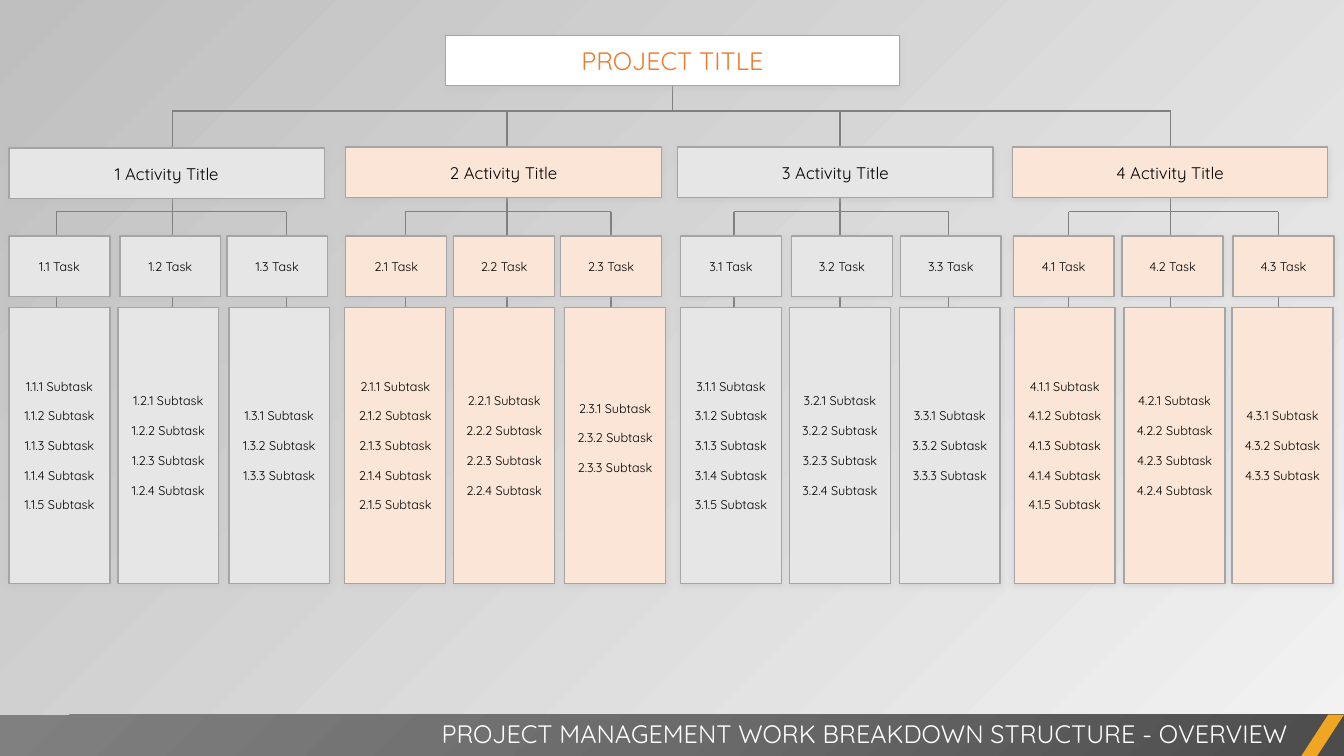
"""Builds a work breakdown structure slide with four activity branches."""
from lxml import etree
from pptx import Presentation
from pptx.dml.color import RGBColor
from pptx.enum.shapes import MSO_CONNECTOR, MSO_SHAPE
from pptx.enum.text import MSO_ANCHOR, MSO_AUTO_SIZE, PP_ALIGN
from pptx.oxml import parse_xml
from pptx.oxml.ns import nsdecls, qn
from pptx.util import Inches, Pt

RECTANGLE = MSO_SHAPE.RECTANGLE
PARALLELOGRAM = MSO_SHAPE.PARALLELOGRAM
STRAIGHT = MSO_CONNECTOR.STRAIGHT
MIDDLE = MSO_ANCHOR.MIDDLE
GROW = MSO_AUTO_SIZE.SHAPE_TO_FIT_TEXT
CENTER = PP_ALIGN.CENTER
RIGHT = PP_ALIGN.RIGHT

COLORS = {
    "white": "FFFFFF", "black": "000000", "title": "ED7D31",
    "gray": "E7E6E6", "peach": "FBE5D6", "border": "A5A5A5",
    "connector": "808080", "shadow": "BFBFBF", "accent": "F0A622",
    "back_light": "F2F2F2", "back_dark": "BFBFBF",
    "band_dark": "4C4C4C", "band_mid": "6B6B6B", "band_light": "808080",
}
TRUNK_Y, BRANCH_Y, DROP_END_Y = 1.1, 2.1, 3.33
TASK_Y, SUBTASK_Y = 2.34, 3.05
SUBTASK_COUNTS = (5, 4, 3)
BRANCHES = (
    {"fill": "gray", "activity": (0.09, 1.47), "drops": (0.56, 1.71, 2.84),
     "tasks": (0.09, 1.19, 2.25), "subtasks": (0.09, 1.17, 2.27)},
    {"fill": "peach", "activity": (3.43, 1.46), "drops": (4.02, 5.03, 6.06),
     "tasks": (3.43, 4.5, 5.56), "subtasks": (3.42, 4.5, 5.6)},
    {"fill": "gray", "activity": (6.72, 1.46), "drops": (7.28, 8.33, 9.41),
     "tasks": (6.75, 7.85, 8.93), "subtasks": (6.75, 7.83, 8.92)},
    {"fill": "peach", "activity": (10.04, 1.46), "drops": (10.6, 11.61, 12.68),
     "tasks": (10.05, 11.13, 12.23), "subtasks": (10.06, 11.15, 12.22)},
)


def rgb(name):
    return RGBColor.from_string(COLORS[name])


class Chart:
    def __init__(self, slide, font="Quicksand"):
        self.slide = slide
        self.font = font

    def background(self):
        fill = self.slide.background.fill
        fill.gradient()
        fill.gradient_angle = 135
        for stop, name in zip(fill.gradient_stops, ("back_light", "back_dark")):
            stop.color.rgb = rgb(name)

    def line(self, x1, y1, x2, y2):
        connector = self.slide.shapes.add_connector(
            STRAIGHT, Inches(x1), Inches(y1), Inches(x2), Inches(y2))
        connector.line.color.rgb = rgb("connector")
        connector.line.width = Pt(1)
        etree.SubElement(connector._element.spPr, qn("a:effectLst"))

    def set_text(self, text_frame, text, size, color, align, gap=0):
        text_frame.word_wrap = True
        text_frame.text = text
        for index, paragraph in enumerate(text_frame.paragraphs):
            paragraph.alignment = align
            if index and gap:
                paragraph.space_before = Pt(gap)
            for run in paragraph.runs:
                run.font.name = self.font
                run.font.size = Pt(size)
                run.font.color.rgb = rgb(color)

    def plain(self, kind, left, top, width, height, fill):
        shape = self.slide.shapes.add_shape(
            kind, Inches(left), Inches(top), Inches(width), Inches(height))
        shape.shadow.inherit = False
        shape.fill.solid()
        shape.fill.fore_color.rgb = rgb(fill)
        shape.line.fill.background()
        return shape

    def box(self, left, top, width, height, fill, text, size, color="black", gap=0):
        shape = self.plain(RECTANGLE, left, top, width, height, fill)
        shape.line.color.rgb = rgb("border")
        shape.line.width = Pt(1)
        shape._element.spPr.find(qn("a:effectLst")).append(parse_xml(
            f'<a:outerShdw {nsdecls("a")} blurRad="50800" dist="12700" dir="5400000">'
            f'<a:srgbClr val="{COLORS["shadow"]}"><a:alpha val="40000"/></a:srgbClr>'
            '</a:outerShdw>'))
        shape.text_frame.vertical_anchor = MIDDLE
        self.set_text(shape.text_frame, text, size, color, CENTER, gap)
        return shape

    def band(self, left, top, width, height):
        shape = self.plain(RECTANGLE, left, top, width, height, "band_mid")
        stops = "".join(
            f'<a:gs pos="{position}"><a:srgbClr val="{COLORS[name]}"/></a:gs>'
            for position, name in ((0, "band_dark"), (50000, "band_mid"), (100000, "band_light")))
        solid = shape._element.spPr.find(qn("a:solidFill"))
        solid.getparent().replace(solid, parse_xml(
            f'<a:gradFill {nsdecls("a")}><a:gsLst>{stops}</a:gsLst>'
            '<a:path path="circle"><a:fillToRect l="100000" t="100000"/></a:path>'
            '</a:gradFill>'))

    def caption(self, left, top, width, height, text):
        shape = self.slide.shapes.add_textbox(
            Inches(left), Inches(top), Inches(width), Inches(height))
        self.set_text(shape.text_frame, text, 18, "white", RIGHT)
        shape.text_frame.auto_size = GROW

    def branch_lines(self, drops):
        first, middle, last = drops
        self.line(first, BRANCH_Y, last, BRANCH_Y)
        for x, top in ((first, BRANCH_Y), (middle, TRUNK_Y), (last, BRANCH_Y)):
            self.line(x, top, x, DROP_END_Y)

    def branch_boxes(self, number, branch):
        fill = branch["fill"]
        self.box(*branch["activity"], 3.13, 0.5, fill, f"{number} Activity Title", 12)
        columns = zip(branch["tasks"], branch["subtasks"], SUBTASK_COUNTS)
        for index, (task_x, subtask_x, count) in enumerate(columns, 1):
            code = f"{number}.{index}"
            self.box(task_x, TASK_Y, 1, 0.6, fill, f"{code} Task", 9)
            subtasks = "\n".join(f"{code}.{item} Subtask" for item in range(1, count + 1))
            shape = self.box(subtask_x, SUBTASK_Y, 1, 2.74, fill, subtasks, 9, gap=10.4)
            if code == "2.3":
                shape.text_frame.margin_bottom = Inches(0.2)


def main():
    presentation = Presentation()
    presentation.slide_width = Inches(13.33)
    presentation.slide_height = Inches(7.5)
    chart = Chart(presentation.slides.add_slide(presentation.slide_layouts[6]))
    chart.background()

    chart.line(6.67, 0.59, 6.67, TRUNK_Y)
    chart.line(BRANCHES[0]["drops"][1], TRUNK_Y, BRANCHES[-1]["drops"][1], TRUNK_Y)
    for branch in BRANCHES:
        chart.branch_lines(branch["drops"])
    chart.box(4.42, 0.35, 4.5, 0.5, "white", "PROJECT TITLE", 18, "title")
    for number, branch in enumerate(BRANCHES, 1):
        chart.branch_boxes(number, branch)

    chart.band(0, 7.09, 13.33, 0.42)
    stripe = chart.plain(PARALLELOGRAM, 12.9, 7.09, 0.43, 0.42, "accent")
    stripe.adjustments[0] = 0.65
    chart.caption(0, 7.08, 12.87, 0.4,
                  "PROJECT MANAGEMENT WORK BREAKDOWN STRUCTURE - OVERVIEW")
    presentation.save("out.pptx")


if __name__ == "__main__":
    main()
